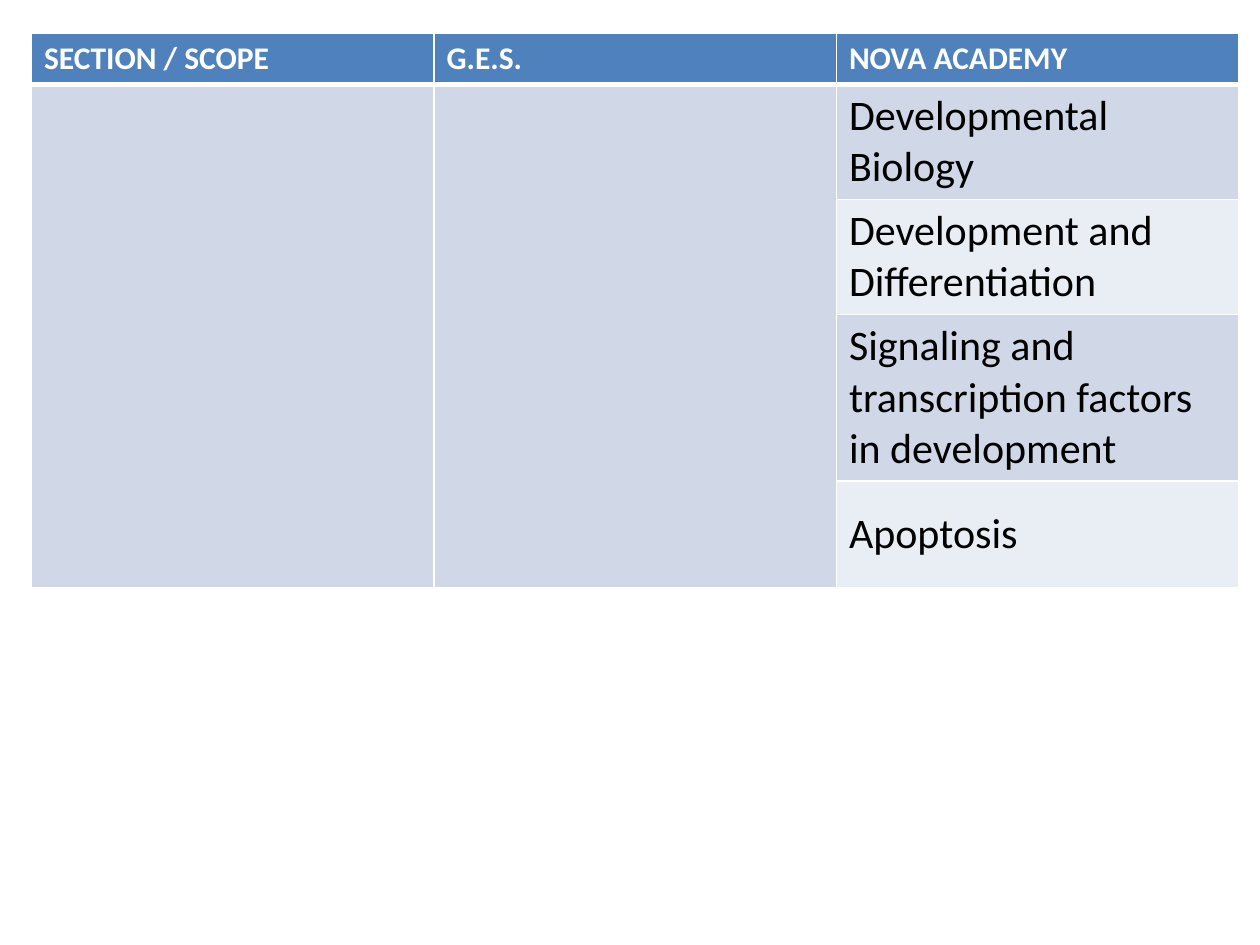
from dataclasses import dataclass

from lxml import etree
from pptx import Presentation
from pptx.dml.color import RGBColor
from pptx.enum.text import MSO_ANCHOR
from pptx.oxml.ns import qn
from pptx.util import Pt

MIDDLE = MSO_ANCHOR.MIDDLE
TOP = MSO_ANCHOR.TOP
BLANK = 6


@dataclass(frozen=True)
class Theme:
    font: str = "Calibri"
    head_size: int = 18
    body_size: int = 24
    white: str = "FFFFFF"
    black: str = "000000"
    blue: str = "4F81BD"
    bands: tuple = ("D0D8E8", "E9EDF4")
    thin: int = 1
    thick: int = 3


THEME = Theme()
HEADS = ["SECTION / SCOPE", "G.E.S.", "NOVA ACADEMY"]
TOPICS = [
    "Developmental Biology",
    "Development and Differentiation",
    "Signaling and transcription factors in development",
    "Apoptosis",
]
HEIGHTS = [27.4, 49, 61.2, 81.4, 61.2]


def set_edges(cell, widths):
    """Draw white borders; widths maps each side to points."""
    props = cell._tc.get_or_add_tcPr()
    for spot, (side, width) in enumerate(widths.items()):
        line = etree.Element(qn(f"a:ln{side}"), w=str(Pt(width)))
        fill = etree.SubElement(line, qn("a:solidFill"))
        etree.SubElement(fill, qn("a:srgbClr"), val=THEME.white)
        props.insert(spot, line)


def style_cell(cell, text, fill, size, color, bold, anchor):
    cell.fill.solid()
    cell.fill.fore_color.rgb = RGBColor.from_string(fill)
    cell.vertical_anchor = anchor
    cell.text = text
    font = cell.text_frame.paragraphs[0].font
    font.name = THEME.font
    font.size = Pt(size)
    font.bold = bold
    font.color.rgb = RGBColor.from_string(color)


def add_scope(slide, left, top, width):
    """Place the scope table, with its topics in the last column."""
    frame = slide.shapes.add_table(
        len(HEIGHTS), len(HEADS), Pt(left), Pt(top), Pt(width), Pt(sum(HEIGHTS))
    )
    table = frame.table
    for col in table.columns:
        col.width = Pt(width / len(HEADS))
    for row, height in zip(table.rows, HEIGHTS):
        row.height = Pt(height)

    # Header row
    for col, head in enumerate(HEADS):
        style_cell(table.cell(0, col), head, THEME.blue,
                   THEME.head_size, THEME.white, True, TOP)

    # Topic rows, banded
    last = len(HEADS) - 1
    for row, topic in enumerate(TOPICS, 1):
        band = THEME.bands[(row - 1) % 2]
        for col in range(len(HEADS)):
            is_topic = col == last
            style_cell(table.cell(row, col), topic if is_topic else "",
                       band if is_topic else THEME.bands[0], THEME.body_size,
                       THEME.black, False, MIDDLE if is_topic else TOP)

    # Borders, heavier under the header
    for row in range(len(HEIGHTS)):
        above = THEME.thick if row == 1 else THEME.thin
        below = THEME.thick if row == 0 else THEME.thin
        for col in range(len(HEADS)):
            set_edges(table.cell(row, col), {
                "L": THEME.thin, "R": THEME.thin, "T": above, "B": below})

    # The first columns span all topics
    for col in range(last):
        table.cell(1, col).merge(table.cell(len(TOPICS), col))


def main():
    deck = Presentation()
    deck.slide_width, deck.slide_height = Pt(720), Pt(540)
    slide = deck.slides.add_slide(deck.slide_layouts[BLANK])
    add_scope(slide, left=18, top=19, width=690)
    deck.save("out.pptx")


if __name__ == "__main__":
    main()
